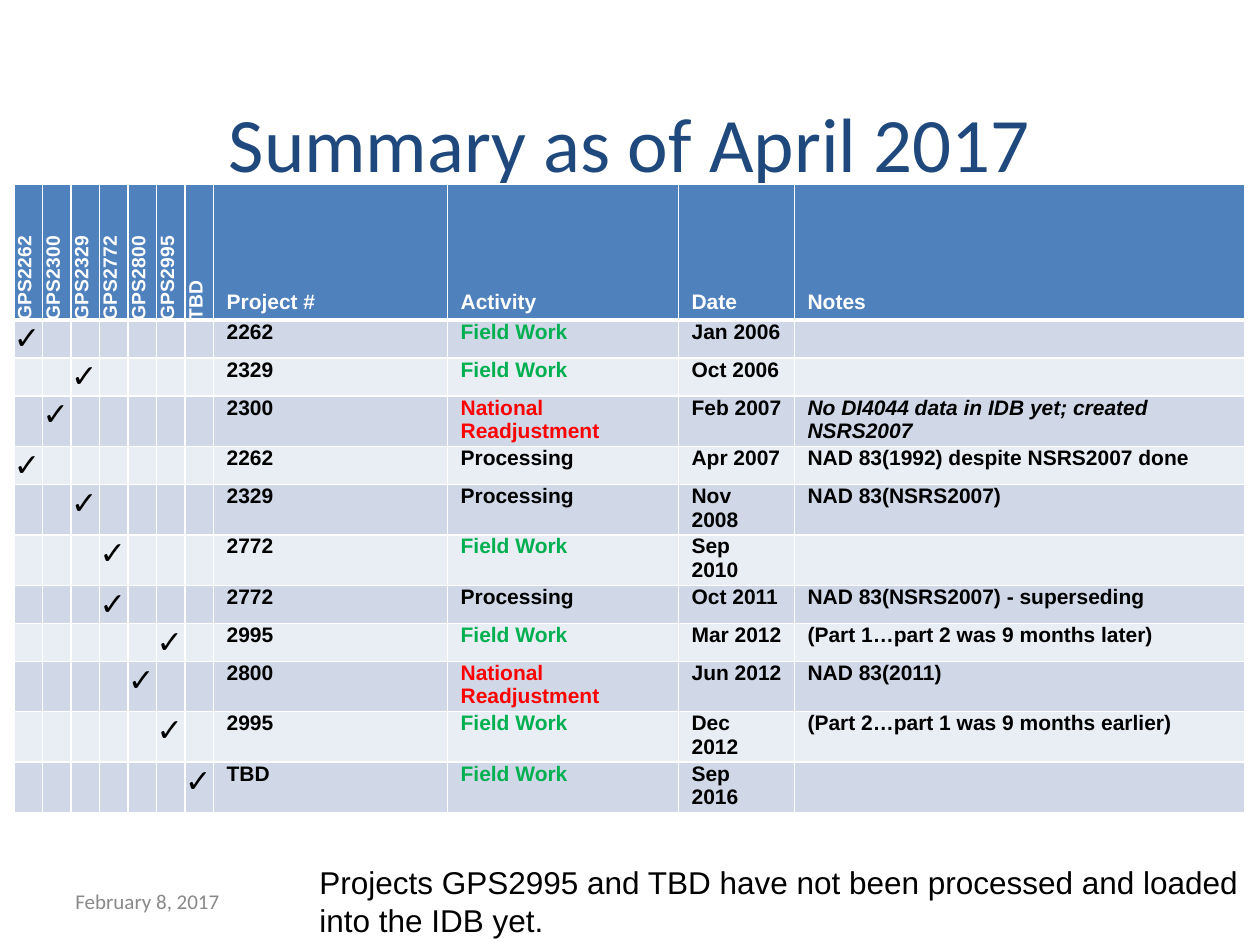
from lxml import etree
from pptx import Presentation
from pptx.dml.color import RGBColor
from pptx.enum.text import MSO_ANCHOR, PP_ALIGN
from pptx.oxml.ns import qn
from pptx.util import Emu, Pt

MIDDLE, BOTTOM, TOP = MSO_ANCHOR.MIDDLE, MSO_ANCHOR.BOTTOM, MSO_ANCHOR.TOP
CENTER = PP_ALIGN.CENTER
EMU_PER_PX = 914400 / 126

COLORS = {
    "title": "1F497D", "date": "898989", "text": "000000", "white": "FFFFFF",
    "header": "4F81BD", "band_dark": "D0D8E8", "band_light": "E9EDF4",
    "field": "00B050", "national": "FF0000",
}
ACTIVITY_COLORS = {"Field Work": "field", "National Readjustment": "national"}

PROJECTS = ["2262", "2300", "2329", "2772", "2800", "2995", "TBD"]
FIELDS = ["Project #", "Activity", "Date", "Notes"]
FIELD_WIDTHS = [234, 231, 116, 450]
CHECKS_WIDTH = 200
HEADER_HEIGHT, ROW_HEIGHT, TALL_ROW_HEIGHT = 136, 38, 47
WRAPPED_ROWS = {3, 5, 9}
PAD = 13

RECORDS = [
    ("2262", "Field Work", "Jan 2006", ""),
    ("2329", "Field Work", "Oct 2006", ""),
    ("2300", "National Readjustment", "Feb 2007",
     "No DI4044 data in IDB yet; created NSRS2007"),
    ("2262", "Processing", "Apr 2007", "NAD 83(1992) despite NSRS2007 done"),
    ("2329", "Processing", "Nov 2008", "NAD 83(NSRS2007)"),
    ("2772", "Field Work", "Sep 2010", ""),
    ("2772", "Processing", "Oct 2011", "NAD 83(NSRS2007) - superseding"),
    ("2995", "Field Work", "Mar 2012", "(Part 1…part 2 was 9 months later)"),
    ("2800", "National Readjustment", "Jun 2012", "NAD 83(2011)"),
    ("2995", "Field Work", "Dec 2012", "(Part 2…part 1 was 9 months earlier)"),
    ("TBD", "Field Work", "Sep 2016", ""),
]


def px(n):
    return Emu(round(n * EMU_PER_PX))


def rgb(name):
    return RGBColor.from_string(COLORS[name])


def add_run(p, text, size, color, font="Arial", bold=False, italic=False):
    r = p.add_run()
    r.text = text
    r.font.size = Pt(size)
    r.font.name = font
    r.font.bold = bold
    r.font.italic = italic
    r.font.color.rgb = rgb(color)


def set_borders(cell, top=1, bottom=1):
    tcPr = cell._tc.get_or_add_tcPr()
    for side, width in (("L", 1), ("R", 1), ("T", top), ("B", bottom)):
        ln = etree.SubElement(tcPr, qn(f"a:ln{side}"), w=str(Pt(width)))
        fill = etree.SubElement(ln, qn("a:solidFill"))
        etree.SubElement(fill, qn("a:srgbClr"), val=COLORS["white"])


def format_cell(cell, fill, side=0, edge=0, anchor=TOP):
    """Set fill and padding: side is left and right, edge is top and bottom."""
    cell.fill.solid()
    cell.fill.fore_color.rgb = rgb(fill)
    cell.margin_left = cell.margin_right = px(side)
    cell.margin_top = cell.margin_bottom = px(edge)
    cell.vertical_anchor = anchor


def fill_header(table):
    for col, name in enumerate(PROJECTS + FIELDS):
        cell = table.cell(0, col)
        set_borders(cell, bottom=3)
        p = cell.text_frame.paragraphs[0]
        if col < len(PROJECTS):
            format_cell(cell, "header")
            cell._tc.tcPr.set("vert", "vert270")
            label = name if name == "TBD" else f"GPS{name}"
            add_run(p, label, 11, "white", bold=True)
        else:
            format_cell(cell, "header", PAD, 6, BOTTOM)
            add_run(p, name, 12, "white", bold=True)


def fill_record(table, row, record):
    project, activity, _, notes = record
    band = "band_dark" if row % 2 else "band_light"
    checks = ["✓" if name == project else "" for name in PROJECTS]
    for col, text in enumerate(checks + list(record)):
        cell = table.cell(row, col)
        set_borders(cell, top=3 if row == 1 else 1)
        is_check = col < len(PROJECTS)
        format_cell(cell, band, 0 if is_check else PAD)
        if not text:
            continue
        p = cell.text_frame.paragraphs[0]
        if is_check:
            add_run(p, text, 18, "text", "Calibri")
        else:
            color = ACTIVITY_COLORS.get(text, "text")
            italic = text == notes and activity == "National Readjustment" and project == "2300"
            add_run(p, text, 12, color, bold=True, italic=italic)


def add_project_table(slide, x, y):
    widths = [px(CHECKS_WIDTH / len(PROJECTS))] * len(PROJECTS)
    widths += [px(w) for w in FIELD_WIDTHS]
    heights = [px(HEADER_HEIGHT)]
    heights += [px(TALL_ROW_HEIGHT if row in WRAPPED_ROWS else ROW_HEIGHT)
                for row in range(1, len(RECORDS) + 1)]
    table = slide.shapes.add_table(len(heights), len(widths), px(x), px(y),
                                   sum(widths), sum(heights)).table
    for column, width in zip(table.columns, widths):
        column.width = width
    for table_row, height in zip(table.rows, heights):
        table_row.height = height
    fill_header(table)
    for row, record in enumerate(RECORDS, 1):
        fill_record(table, row, record)


def set_title(slide, x, y, w, h):
    title = slide.shapes.title
    title.left, title.top, title.width, title.height = map(px, (x, y, w, h))
    tf = title.text_frame
    tf.vertical_anchor = MIDDLE
    p = tf.paragraphs[0]
    p.alignment = CENTER
    add_run(p, "Summary as of April 2017", 44, "title", "Calibri")


def add_text(slide, box, lines, size, color, font, anchor=TOP, wrap=True):
    tf = slide.shapes.add_textbox(*map(px, box)).text_frame
    tf.word_wrap = wrap
    tf.vertical_anchor = anchor
    for i, line in enumerate(lines):
        p = tf.add_paragraph() if i else tf.paragraphs[0]
        add_run(p, line, size, color, font)


def main():
    prs = Presentation()
    prs.slide_width, prs.slide_height = px(1260), px(945)
    slide = prs.slides.add_slide(prs.slide_layouts[5])
    set_title(slide, 63, 63, 1134, 158)
    add_text(slide, (63, 876, 294, 50), ["February 8, 2017"],
             12, "date", "Calibri", MIDDLE)
    add_project_table(slide, 14, 184)
    add_text(slide, (307, 857, 953, 89),
             ["Projects GPS2995 and TBD have not been processed and loaded",
              "into the IDB yet."], 18, "text", "Arial", wrap=False)
    prs.save("out.pptx")


if __name__ == "__main__":
    main()
